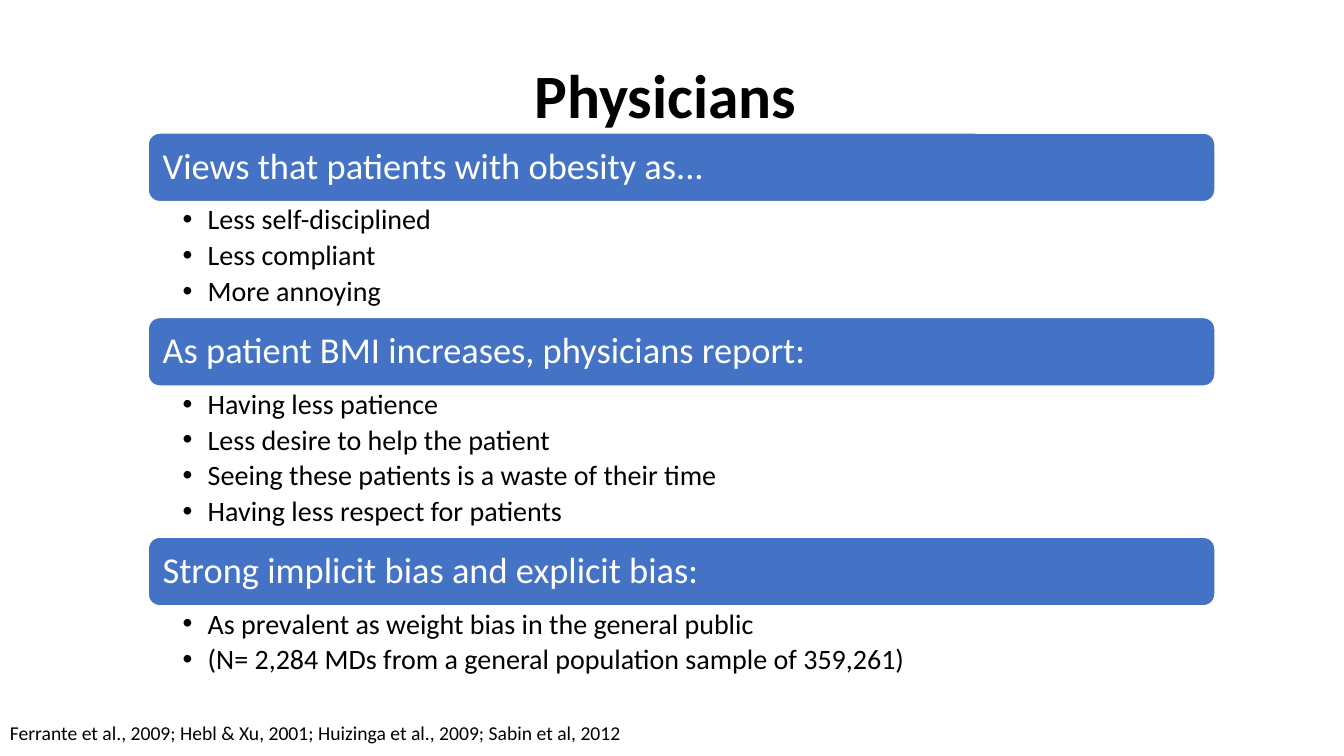
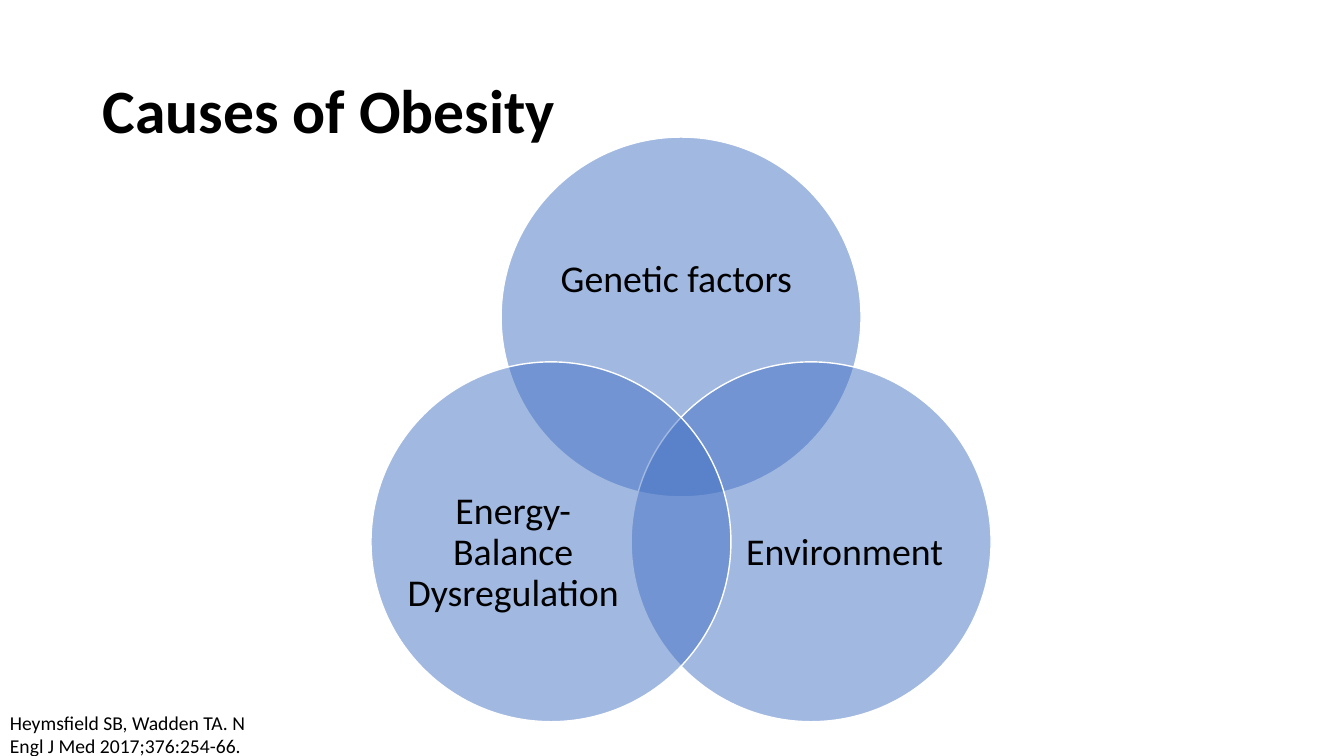
from pptx import Presentation
from pptx.dml.color import RGBColor
from pptx.enum.shapes import MSO_SHAPE as Preset
from pptx.enum.text import MSO_ANCHOR as Anchor, PP_ALIGN as Align
from pptx.oxml.ns import qn
from pptx.util import Inches, Pt
from lxml.etree import SubElement

BLUE = RGBColor(0x44, 0x72, 0xC4)
WHITE = RGBColor(0xFF, 0xFF, 0xFF)
BLACK = RGBColor(0x00, 0x00, 0x00)
FONT = "Calibri"


def write(shape, *lines, size, color=BLACK, bold=False, align=Align.LEFT, anchor=Anchor.TOP,
          insets=(0.1, 0.05, 0.1, 0.05), spacing=0.9, after=0, bullet=False):
    """Fill a shape with one paragraph per line; insets are left, top, right, bottom."""
    frame = shape.text_frame
    frame.word_wrap = True
    frame.vertical_anchor = anchor
    frame.margin_left, frame.margin_top, frame.margin_right, frame.margin_bottom = map(Inches, insets)
    for index, line in enumerate(lines):
        para = frame.add_paragraph() if index else frame.paragraphs[0]
        if bullet:
            props = para._p.get_or_add_pPr()
            props.set("marL", str(Inches(0.25)))
            props.set("indent", str(Inches(-0.25)))
            SubElement(props, qn("a:buFont")).set("typeface", "Arial")
            SubElement(props, qn("a:buChar")).set("char", "•")
        para.alignment = align
        para.line_spacing = spacing
        para.space_after = Pt(after)
        span = para.add_run()
        span.text = line
        span.font.name = FONT
        span.font.size = Pt(size)
        span.font.bold = bold
        span.font.color.rgb = color


def add_blue_shape(page, preset, left, top, width, height):
    shape = page.shapes.add_shape(preset, Inches(left), Inches(top), Inches(width), Inches(height))
    shape.shadow.inherit = False
    shape.fill.solid()
    shape.fill.fore_color.rgb = BLUE
    shape.line.color.rgb = WHITE
    shape.line.width = Pt(1)
    return shape


deck = Presentation()
deck.slide_width, deck.slide_height = Inches(13.33), Inches(7.5)

# Title and citation of each slide
pages = []
for title, title_top, align, source, source_top, source_width, source_height in [
    ("Physicians ", 0.25, Align.CENTER,
     "Ferrante et al., 2009; Hebl & Xu, 2001; Huizinga et al., 2009; Sabin et al, 2012",
     7.1, 7.17, 0.33),
    ("Causes of Obesity", 0.4, Align.LEFT,
     "Heymsfield SB, Wadden TA. N Engl J Med 2017;376:254-66.",
     7, 2.7, 0.57),
]:
    page = deck.slides.add_slide(deck.slide_layouts[6])
    box = page.shapes.add_textbox(Inches(0.92), Inches(title_top), Inches(11.5), Inches(1.45))
    write(box, title, size=44, bold=True, align=align, anchor=Anchor.MIDDLE)
    box = page.shapes.add_textbox(Inches(0), Inches(source_top), Inches(source_width), Inches(source_height))
    write(box, source, size=14, spacing=1.0)
    pages.append(page)
physicians, causes = pages

# Slide 1: stacked heading bars, each with a bullet list below
LIST_LEFT, LIST_WIDTH, BAR_HEIGHT = 1.47, 10.58, 0.68
top = 1.32
for heading, list_height, points in [
    ("Views that patients with obesity as...", 1.15,
     ["Less self-disciplined", "Less compliant", "More annoying"]),
    ("As patient BMI increases, physicians report:", 1.5,
     ["Having less patience", "Less desire to help the patient",
      "Seeing these patients is a waste of their time", "Having less respect for patients"]),
    ("Strong implicit bias and explicit bias:", 0.75,
     ["As prevalent as weight bias in the general public",
      "(N= 2,284 MDs from a general population sample of 359,261)"]),
]:
    bar = add_blue_shape(physicians, Preset.ROUNDED_RECTANGLE, LIST_LEFT, top, LIST_WIDTH, BAR_HEIGHT)
    write(bar, heading, size=26, color=WHITE, anchor=Anchor.MIDDLE, insets=(0.11, 0.11, 0.11, 0.11))
    top += BAR_HEIGHT
    box = physicians.shapes.add_textbox(Inches(LIST_LEFT), Inches(top), Inches(LIST_WIDTH), Inches(list_height))
    write(box, *points, size=20, insets=(0.34, 0.04, 0.2, 0.04), after=4, bullet=True)
    top += list_height

# Slide 2: three overlapping circles; each label box is placed relative to its circle
DIAMETER = 3.57
for label, left, top, label_dx, label_dy, label_width, label_height in [
    ("Genetic factors ", 4.97, 1.36, 0.47, 0.62, 2.62, 1.61),
    ("Environment ", 6.26, 3.59, 1.09, 0.92, 2.14, 1.96),
    ("Energy- Balance Dysregulation ", 3.68, 3.59, 0.34, 0.92, 2.14, 1.96),
]:
    circle = add_blue_shape(causes, Preset.OVAL, left, top, DIAMETER, DIAMETER)
    fill_color = circle._element.spPr.find(qn("a:solidFill"))[0]
    SubElement(fill_color, qn("a:alpha")).set("val", "50000")
    box = causes.shapes.add_textbox(Inches(left + label_dx), Inches(top + label_dy),
                                    Inches(label_width), Inches(label_height))
    write(box, label, size=27, align=Align.CENTER, anchor=Anchor.MIDDLE, insets=(0, 0, 0, 0))

deck.save("out.pptx")
